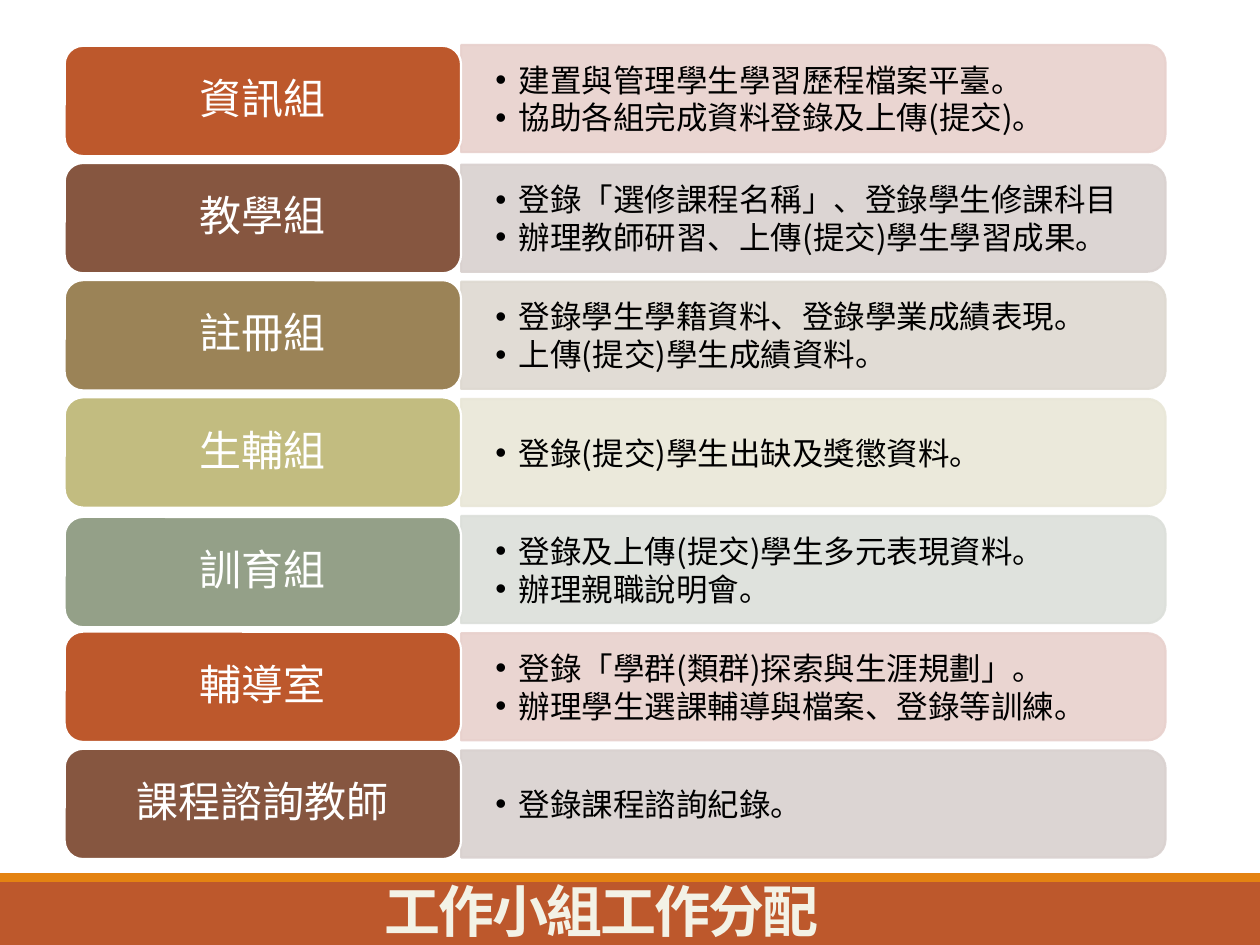
from lxml.etree import SubElement
from pptx import Presentation
from pptx.dml.color import RGBColor
from pptx.enum.shapes import MSO_SHAPE as Preset
from pptx.enum.text import MSO_ANCHOR as Anchor, PP_ALIGN as Align
from pptx.oxml.ns import qn
from pptx.util import Pt

FONT = "Noto Sans CJK SC"


def paint(shape, color, line=None, alpha=None):
    shape.shadow.inherit = False
    fills = [shape.fill]
    if line:
        shape.line.width = Pt(1.25)
        fills.append(shape.line.fill)
    else:
        shape.line.fill.background()
    for fill, value in zip(fills, (color, line)):
        fill.solid()
        fill.fore_color.rgb = RGBColor.from_string(value)
    if alpha:
        for element in list(shape._element.spPr.iter(qn("a:srgbClr"))):
            SubElement(element, qn("a:alpha"), val=str(alpha * 1000))


def write(shape, text, size, color, align=Align.LEFT, anchor=Anchor.MIDDLE, bold=False,
          line_spacing=None, letter_spacing=None, bullet=False, insets=(7.2, 3.6)):
    frame = shape.text_frame
    frame.word_wrap = True
    frame.vertical_anchor = anchor
    frame.margin_left = frame.margin_right = Pt(insets[0])
    frame.margin_top = frame.margin_bottom = Pt(insets[1])
    frame.text = text
    for paragraph in frame.paragraphs:
        paragraph.alignment = align
        if line_spacing:
            paragraph.line_spacing = line_spacing
        if bullet:
            paragraph.level = 1
            properties = paragraph._p.get_or_add_pPr()
            properties.set("marL", str(Pt(13.5)))
            properties.set("indent", str(-Pt(13.5)))
            SubElement(properties, qn("a:buFont"), typeface="Arial")
            SubElement(properties, qn("a:buChar"), char="•")
        for run in paragraph.runs:
            run.font.size = Pt(size)
            run.font.bold = bold
            run.font.color.rgb = RGBColor.from_string(color)
            run.font.name = FONT
            run_properties = run._r.get_or_add_rPr()
            SubElement(run_properties, qn("a:ea"), typeface=FONT)
            if letter_spacing:
                run_properties.set("spc", str(round(letter_spacing * 100)))


presentation = Presentation()
presentation.slide_width, presentation.slide_height = Pt(720), Pt(540)
slide = presentation.slides.add_slide(presentation.slide_layouts[6])
shapes = slide.shapes

for top, height, color in [(504, 36, "BD582C"), (499, 5, "E48312")]:
    band = shapes.add_shape(Preset.RECTANGLE, 0, Pt(top), Pt(720), Pt(height))
    paint(band, color)

palette = [("BD582C", "E8D1CD"), ("865640", "D9D1CF"), ("9B8357", "DED9D1"),
           ("C2BC80", "E9E7D8"), ("94A088", "DCDFDA")]
teams = [
    ("資訊組", ["建置與管理學生學習歷程檔案平臺。", "協助各組完成資料登錄及上傳(提交)。"]),
    ("教學組", ["登錄「選修課程名稱」、登錄學生修課科目", "辦理教師研習、上傳(提交)學生學習成果。"]),
    ("註冊組", ["登錄學生學籍資料、登錄學業成績表現。", "上傳(提交)學生成績資料。"]),
    ("生輔組", ["登錄(提交)學生出缺及獎懲資料。"]),
    ("訓育組", ["登錄及上傳(提交)學生多元表現資料。", "辦理親職說明會。"]),
    ("輔導室", ["登錄「學群(類群)探索與生涯規劃」。", "辦理學生選課輔導與檔案、登錄等訓練。"]),
    ("課程諮詢教師", ["登錄課程諮詢紀錄。"]),
]
first_center, pitch = 57.7, 66.95
panel_left, panel_width, panel_height = 263.5, 402.5, 61.2
label_height, duties_height = 63, 55
panel_shifts, label_shifts = {0: -1.4}, {4: 1.4}

for index, (team, duties) in enumerate(teams):
    dark, light = palette[index % len(palette)]
    center = first_center + index * pitch
    panel_center = center + panel_shifts.get(index, 0)
    label_center = center + label_shifts.get(index, 0)

    panel = shapes.add_shape(
        Preset.ROUND_2_SAME_RECTANGLE,
        Pt(panel_left + (panel_width - panel_height) / 2), Pt(panel_center - panel_width / 2),
        Pt(panel_height), Pt(panel_width))
    panel.rotation = 90
    paint(panel, light, line=light, alpha=90)

    duty_box = shapes.add_textbox(Pt(panel_left), Pt(panel_center - duties_height / 2),
                                  Pt(399.5), Pt(duties_height))
    write(duty_box, "\n".join(duties), 18, "000000", bullet=True, insets=(19.5, 9.75))

    label = shapes.add_shape(Preset.ROUNDED_RECTANGLE, Pt(37), Pt(label_center - label_height / 2),
                             Pt(226.5), Pt(label_height))
    paint(label, dark, line="FFFFFF")
    write(label, team, 24, "FFFFFF", align=Align.CENTER, line_spacing=0.9)

title = shapes.add_textbox(Pt(212.5), Pt(503.5), Pt(440.5), Pt(39.5))
write(title, "工作小組工作分配", 32, "F3F2E6", anchor=Anchor.TOP, bold=True,
      line_spacing=0.85, letter_spacing=-1.2)

presentation.save("out.pptx")
